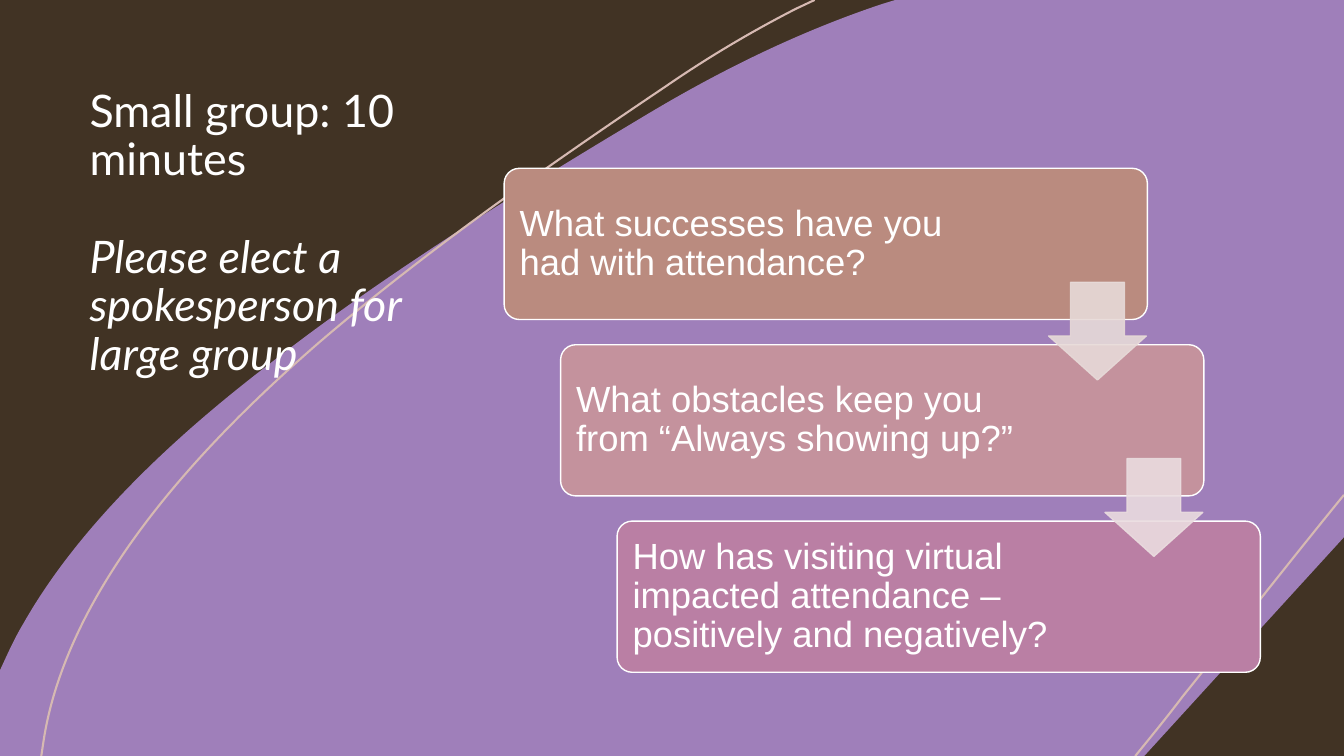
import pptx
import pptx.util
import pptx.dml.color
import pptx.enum.shapes
import pptx.enum.text
import pptx.oxml
import pptx.oxml.ns

Inches = pptx.util.Inches
Pt = pptx.util.Pt
PRESETS = pptx.enum.shapes.MSO_SHAPE
ANCHORS = pptx.enum.text.MSO_ANCHOR

COLORS = {
    "brown": "413324", "purple": "9F7FBA", "sand": "D6B9B2", "white": "FFFFFF",
    "clay": "BA8B7F", "rose": "C4929D", "mauve": "BA7FA4",
    "pale clay": "E7DAD8", "pale rose": "EADCDF",
}
QUESTIONS = [
    ("What successes have you had with attendance?", "clay"),
    ("What obstacles keep you from “Always showing up?”", "rose"),
    ("How has visiting virtual impacted attendance – positively and negatively?", "mauve"),
]
ARROW_COLORS = ["pale clay", "pale rose"]

SWEEP = [
    (8.88, 0), (13.33, 0), (13.33, 5.33), (11.35, 7.5), (0, 7.5), (0, 6.66),
    (0, 6.65),
    (0.07, 6.5, 0.14, 6.34, 0.23, 6.19), (0.74, 5.29, 1.61, 4.42, 2.7, 3.59),
    (3.78, 2.75, 5.07, 1.94, 6.41, 1.14), (7.26, 0.63, 8.03, 0.28, 8.75, 0.04),
]
LEFT_ARC = [
    (0.41, 7.5), (0.43, 7.37),
    (0.49, 6.96, 0.63, 6.56, 0.83, 6.16), (1.31, 5.21, 2.13, 4.3, 3.14, 3.42),
    (4.15, 2.55, 5.35, 1.7, 6.6, 0.86), (7.05, 0.55, 7.48, 0.3, 7.89, 0.09),
    (8.08, 0),
]
RIGHT_ARC = [
    (13.33, 4.91),
    (12.8, 5.56, 12.27, 6.24, 11.73, 6.91), (11.58, 7.11, 11.35, 7.39, 11.26, 7.5),
]


def color(name):
    return pptx.dml.color.RGBColor.from_string(COLORS[name])


def paint(shape, fill=None, line=None, width=1, opacity=None):
    shape.shadow.inherit = False
    if fill:
        shape.fill.solid()
        shape.fill.fore_color.rgb = color(fill)
    else:
        shape.fill.background()
    if line:
        shape.line.color.rgb = color(line)
        shape.line.width = Pt(width)
    else:
        shape.line.fill.background()
    if opacity:
        for tint in shape._element.spPr.iter(pptx.oxml.ns.qn("a:srgbClr")):
            alpha = pptx.oxml.parse_xml(
                f'<a:alpha {pptx.oxml.ns.nsdecls("a")} val="{opacity * 1000}"/>')
            tint.append(alpha)


def bend(shape, outline):
    segments = list(shape._element.spPr.iter(pptx.oxml.ns.qn("a:lnTo")))
    position = 0
    for part in outline[1:]:
        count = len(part) // 2
        if count == 3:
            curve = pptx.oxml.parse_xml(
                f'<a:cubicBezTo {pptx.oxml.ns.nsdecls("a")}/>')
            first, second, end = segments[position:position + 3]
            first.addprevious(curve)
            for segment in (first, second, end):
                curve.append(segment[0])
                segment.getparent().remove(segment)
        position += count


def add_outline(page, outline, closed=False, **finish):
    points = [(Inches(part[i]), Inches(part[i + 1]))
              for part in outline for i in range(0, len(part), 2)]
    builder = page.shapes.build_freeform(*points[0], scale=1.0)
    builder.add_line_segments(points[1:], close=closed)
    shape = builder.convert_to_shape()
    bend(shape, outline)
    paint(shape, **finish)


def write(para, text, font, size, italic=False, before=0):
    para.alignment = pptx.enum.text.PP_ALIGN.LEFT
    para.line_spacing = 0.9
    para.space_before = Pt(before)
    span = para.add_run()
    span.text = text
    span.font.name = font
    span.font.size = Pt(size)
    span.font.italic = italic
    span.font.color.rgb = color("white")


def add_backdrop(page):
    page.background.fill.solid()
    page.background.fill.fore_color.rgb = color("brown")
    add_outline(page, SWEEP, closed=True, fill="purple")
    for arc in (LEFT_ARC, RIGHT_ARC):
        add_outline(page, arc, line="sand", width=1.5)


def add_heading(page, left, top, width, height):
    box = page.shapes.add_textbox(
        Inches(left), Inches(top), Inches(width), Inches(height))
    frame = box.text_frame
    frame.word_wrap = True
    frame.vertical_anchor = ANCHORS.TOP
    write(frame.paragraphs[0], "Small group: 10 minutes", "Lato", 32)
    write(frame.add_paragraph(), "Please elect a spokesperson for large group",
          "Lato", 32, italic=True, before=35)


def add_card(page, left, top, width, height, text, fill):
    card = page.shapes.add_shape(
        PRESETS.ROUNDED_RECTANGLE,
        Inches(left), Inches(top), Inches(width), Inches(height))
    card.adjustments[0] = 0.1
    paint(card, fill=fill, line="white")
    frame = card.text_frame
    frame.word_wrap = True
    frame.vertical_anchor = ANCHORS.MIDDLE
    frame.margin_left = frame.margin_top = frame.margin_bottom = Inches(0.11)
    frame.margin_right = Inches(1.65)
    write(frame.paragraphs[0], text, "Arial", 26)


def add_arrow(page, left, top, size, fill):
    arrow = page.shapes.add_shape(
        PRESETS.DOWN_ARROW, Inches(left), Inches(top), Inches(size), Inches(size))
    arrow.adjustments[0] = 0.55
    arrow.adjustments[1] = 0.45
    paint(arrow, fill=fill, line=fill, opacity=90)


def add_staircase(page, left, top, width, height):
    card_width, card_height = 6.38, 1.5
    last = len(QUESTIONS) - 1
    across = (width - card_width) / last
    down = (height - card_height) / last
    corners = [(left + across * i, top + down * i) for i in range(last + 1)]
    for (x, y), (text, fill) in zip(corners, QUESTIONS):
        add_card(page, x, y, card_width, card_height, text, fill)
    for (x, y), fill in zip(corners, ARROW_COLORS):
        add_arrow(page, x + 5.4, y + 1.13, 0.97, fill)


def main():
    deck = pptx.Presentation()
    deck.slide_width, deck.slide_height = Inches(13.33), Inches(7.5)
    page = deck.slides.add_slide(deck.slide_layouts[6])
    add_backdrop(page)
    add_heading(page, 0.79, 0.83, 3.33, 3.31)
    add_staircase(page, 5, 1.67, 7.5, 5)
    deck.save("out.pptx")


if __name__ == "__main__":
    main()
